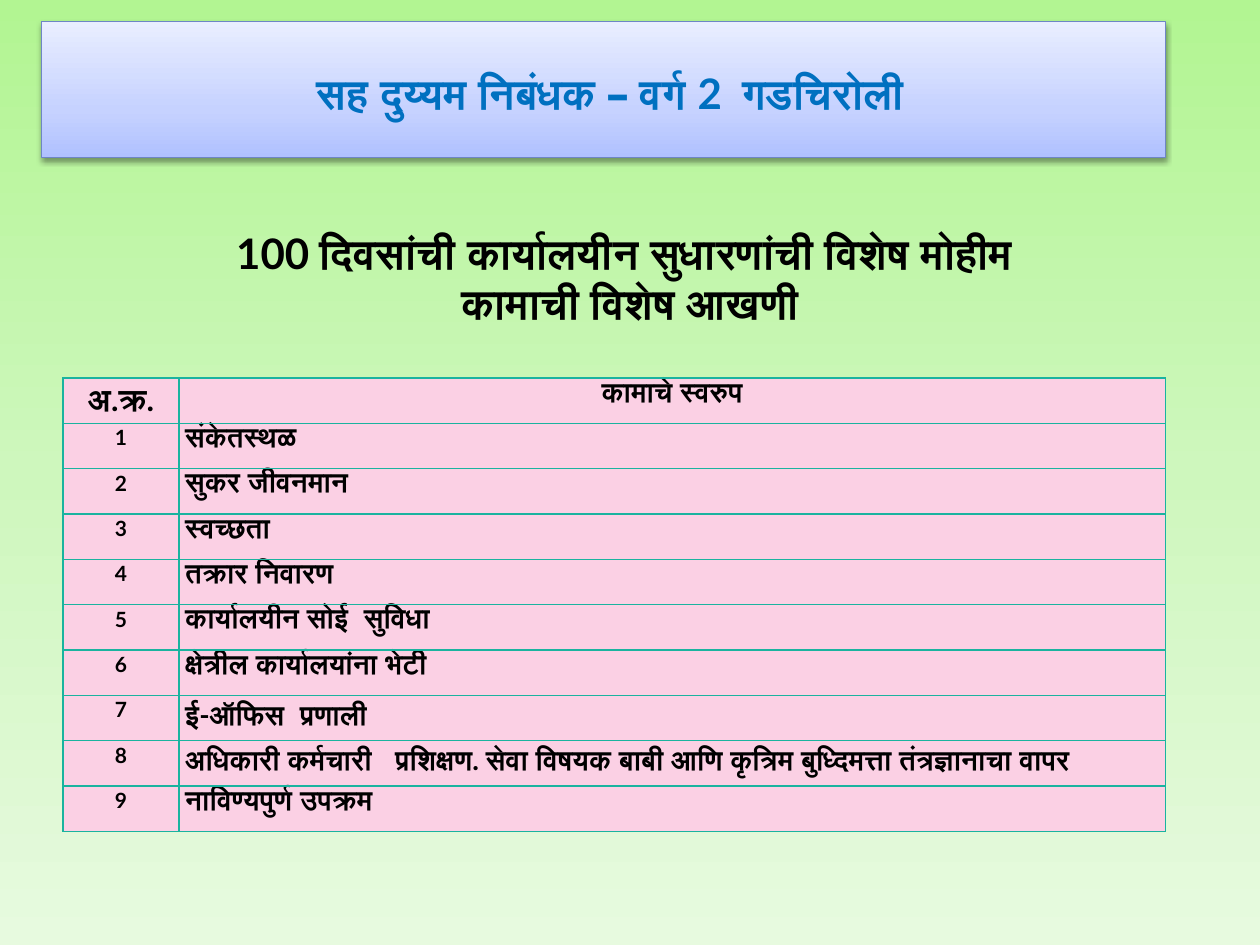
"""Build the slide on the 100-day office improvement campaign."""
from lxml import etree
from pptx import Presentation
from pptx.dml.color import RGBColor
from pptx.enum.text import MSO_ANCHOR, MSO_AUTO_SIZE, PP_ALIGN
from pptx.oxml.ns import qn
from pptx.util import Inches, Pt

COLORS = {
    "heading": "0070C0",
    "text": "000000",
    "banner_line": "6E86C6",
    "cell": "FBD0E4",
    "border": "1AB39F",
}
BACKDROP_STOPS = [(0, "B2F592"), (50, "CEF7BD"), (100, "E7FADF")]
BANNER_STOPS = [(0, "B0C1FF"), (35, "C6D2FF"), (100, "E9EEFF")]
TASKS = [
    "संकेतस्थळ",
    "सुकर जीवनमान",
    "स्वच्छता",
    "तक्रार निवारण",
    "कार्यालयीन सोई  सुविधा",
    "क्षेत्रील कार्यालयांना भेटी",
    "ई-ऑफिस  प्रणाली",
    "अधिकारी कर्मचारी   प्रशिक्षण. सेवा विषयक बाबी आणि कृत्रिम बुध्दिमत्ता तंत्रज्ञानाचा वापर",
    "नाविण्यपुर्ण उपक्रम",
]


def add_run(paragraph, text, size, color="text"):
    run = paragraph.add_run()
    run.text = text
    run.font.name = "Lato"
    run.font.size = Pt(size)
    run.font.bold = True
    run.font.color.rgb = RGBColor.from_string(COLORS[color])


def set_gradient(fill, owner, stops, angle):
    fill.gradient()
    fill.gradient_angle = angle
    stop_list = owner.find(".//" + qn("a:gsLst"))
    for old_stop in list(stop_list):
        stop_list.remove(old_stop)
    for position, color in stops:
        stop = etree.SubElement(stop_list, qn("a:gs"), pos=str(position * 1000))
        etree.SubElement(stop, qn("a:srgbClr"), val=color)


prs = Presentation()
prs.slide_width = Inches(10)
prs.slide_height = Inches(7.5)
slide = prs.slides.add_slide(prs.slide_layouts[0])
set_gradient(slide.background.fill, slide.element, BACKDROP_STOPS, 270)
subtitle = slide.placeholders[1].element
subtitle.getparent().remove(subtitle)

banner = slide.shapes.title
banner.left, banner.top = Inches(0.33), Inches(0.17)
banner.width, banner.height = Inches(8.92), Inches(1.08)
set_gradient(banner.fill, banner.element, BANNER_STOPS, 90)
banner.line.color.rgb = RGBColor.from_string(COLORS["banner_line"])
banner.line.width = Pt(0.75)
effects = etree.SubElement(banner.element.spPr, qn("a:effectLst"))
shadow = etree.SubElement(
    effects, qn("a:outerShdw"), blurRad=str(Pt(3.1)), dist=str(Pt(1.6)),
    dir="5400000", rotWithShape="0",
)
shadow_color = etree.SubElement(shadow, qn("a:srgbClr"), val=COLORS["text"])
etree.SubElement(shadow_color, qn("a:alpha"), val="38000")
banner.text_frame.auto_size = MSO_AUTO_SIZE.NONE
banner.text_frame.vertical_anchor = MSO_ANCHOR.MIDDLE
heading = banner.text_frame.paragraphs[0]
heading.alignment = PP_ALIGN.CENTER
add_run(heading, " ", 28, "heading")
add_run(heading, "सह दुय्यम निबंधक – वर्ग 2  गडचिरोली", 24, "heading")

campaign = slide.shapes.add_textbox(Inches(0), Inches(1.75), Inches(10), Inches(0.91)).text_frame
campaign.word_wrap = True
campaign.auto_size = MSO_AUTO_SIZE.SHAPE_TO_FIT_TEXT
campaign.vertical_anchor = MSO_ANCHOR.MIDDLE
campaign.add_paragraph()
campaign_lines = ["100 दिवसांची कार्यालयीन सुधारणांची विशेष मोहीम ", "कामाची विशेष आखणी"]
for paragraph, line in zip(campaign.paragraphs, campaign_lines):
    paragraph.alignment = PP_ALIGN.CENTER
    add_run(paragraph, line, 24)

task_rows = [("अ.क्र.", "कामाचे स्वरुप")]
task_rows += [(str(number), task) for number, task in enumerate(TASKS, 1)]
row_height = Inches(0.36)
task_table = slide.shapes.add_table(
    len(task_rows), 2, Inches(0.5), Inches(3), Inches(8.75), row_height * len(task_rows)
).table
task_table.first_row = False
task_table.horz_banding = False
task_table.columns[0].width = Inches(0.92)
task_table.columns[1].width = Inches(7.83)

for row_index, row_texts in enumerate(task_rows):
    task_table.rows[row_index].height = row_height
    sizes = (12, 16) if row_index else (18, 16)
    for column, (text, size) in enumerate(zip(row_texts, sizes)):
        cell = task_table.cell(row_index, column)
        cell.margin_left = cell.margin_right = Inches(0.05)
        cell.margin_top = cell.margin_bottom = Inches(0)
        cell_properties = cell.text_frame._txBody.getparent().get_or_add_tcPr()
        for side in ("a:lnL", "a:lnR", "a:lnT", "a:lnB"):
            border = etree.SubElement(cell_properties, qn(side), w=str(Pt(1)))
            border_fill = etree.SubElement(border, qn("a:solidFill"))
            etree.SubElement(border_fill, qn("a:srgbClr"), val=COLORS["border"])
        cell.fill.solid()
        cell.fill.fore_color.rgb = RGBColor.from_string(COLORS["cell"])
        paragraph = cell.text_frame.paragraphs[0]
        paragraph.line_spacing = 1.07
        centred = row_index == 0 or column == 0
        paragraph.alignment = PP_ALIGN.CENTER if centred else PP_ALIGN.LEFT
        add_run(paragraph, text, size)

prs.save("out.pptx")
